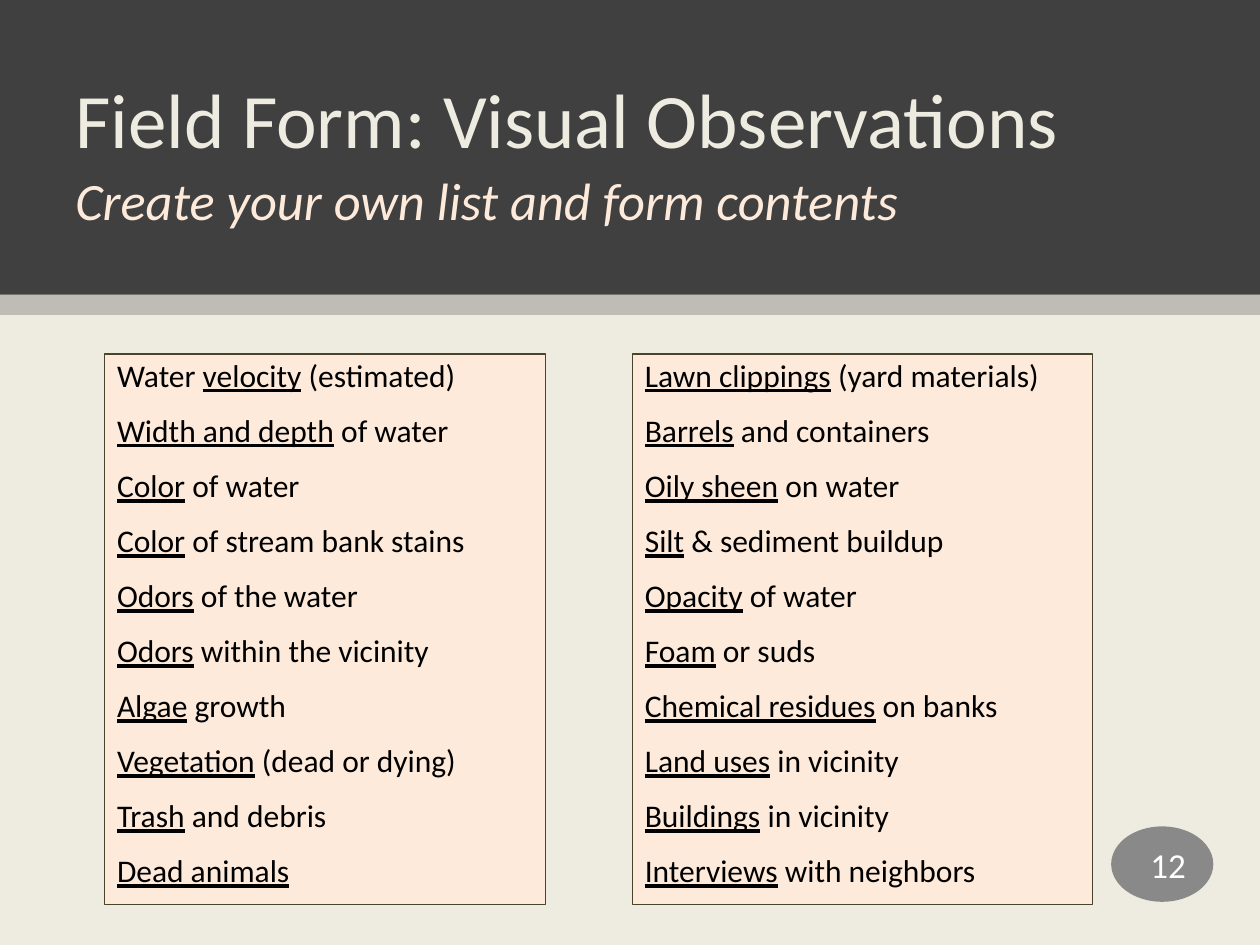
from lxml import etree
from pptx import Presentation
from pptx import util as u
from pptx.dml.color import RGBColor
from pptx.enum import shapes, text
from pptx.oxml import ns

COLORS = {
    "cream": "EEECE1",
    "charcoal": "404040",
    "peach": "FDEADA",
    "olive": "4A452A",
    "gray": "898989",
    "black": "000000",
    "white": "FFFFFF",
}
FONT = "Calibri"

WATER_SIGNS = [
    "Water _velocity_ (estimated)",
    "_Width and depth_ of water",
    "_Color_ of water",
    "_Color_ of stream bank stains",
    "_Odors_ of the water",
    "_Odors_ within the vicinity",
    "_Algae_ growth",
    "_Vegetation_ (dead or dying)",
    "_Trash_ and debris",
    "_Dead animals_",
]
SITE_SIGNS = [
    "_Lawn clippings_ (yard materials)",
    "_Barrels_ and containers",
    "_Oily sheen_ on water",
    "_Silt_ & sediment buildup",
    "_Opacity_ of water",
    "_Foam_ or suds",
    "_Chemical residues_ on banks",
    "_Land uses_ in vicinity",
    "_Buildings_ in vicinity",
    "_Interviews_ with neighbors",
]


def color(name):
    return RGBColor.from_string(COLORS[name])


def add_panel(page, box, fill, line=None, kind=shapes.MSO_SHAPE.RECTANGLE):
    panel = page.shapes.add_shape(kind, *map(u.Cm, box))
    panel.shadow.inherit = False
    panel.fill.solid()
    panel.fill.fore_color.rgb = color(fill)
    if line:
        panel.line.color.rgb = color(line)
        panel.line.width = u.Pt(0.75)
    else:
        panel.line.fill.background()
    return panel


def style_para(para, size, ink, align=text.PP_ALIGN.LEFT):
    para.alignment = align
    para.font.name = FONT
    para.font.size = u.Pt(size)
    para.font.color.rgb = color(ink)


def add_header(page, box):
    left, top, width, height = box
    strip_height = 0.41
    add_panel(page, box, "charcoal")
    title = page.shapes.add_textbox(
        u.Cm(left + 1.27), u.Cm(top + 1.19), u.Cm(width - 1.7), u.Cm(3.94))
    frame = title.text_frame
    frame.word_wrap = True
    frame.vertical_anchor = text.MSO_ANCHOR.MIDDLE
    heading, subtitle = frame.paragraphs[0], frame.add_paragraph()
    heading.text = "Field Form: Visual Observations"
    subtitle.text = "Create your own list and form contents"
    style_para(heading, 44, "cream")
    style_para(subtitle, 30, "peach")
    subtitle.font.italic = True
    for para in frame.paragraphs:
        para.line_spacing = 0.9
        para.space_after = u.Pt(6)
    strip = add_panel(page, (left, top + height, width, strip_height), "black")
    tone = strip.fill._xPr.find(".//" + ns.qn("a:srgbClr"))
    etree.SubElement(tone, ns.qn("a:alpha"), val="20000")


def add_checklist(page, box, items):
    frame = add_panel(page, box, "peach", "olive").text_frame
    frame.word_wrap = True
    frame.vertical_anchor = text.MSO_ANCHOR.TOP
    for index, item in enumerate(items):
        para = frame.add_paragraph() if index else frame.paragraphs[0]
        style_para(para, 18, "black")
        para.line_spacing = 0.9
        para.space_before = u.Pt(12)
        for position, part in enumerate(item.split("_")):
            if part:
                span = para.add_run()
                span.text = part
                span.font.underline = position % 2 == 1


def add_page_number(page, box, number):
    badge = add_panel(page, box, "gray", kind=shapes.MSO_SHAPE.OVAL)
    frame = badge.text_frame
    frame.vertical_anchor = text.MSO_ANCHOR.MIDDLE
    para = frame.paragraphs[0]
    para.text = str(number)
    para.space_after = u.Pt(6)
    style_para(para, 20, "white", text.PP_ALIGN.RIGHT)


def main():
    deck = Presentation()
    deck.slide_width, deck.slide_height = u.Cm(25.4), u.Cm(19.05)
    page = deck.slides.add_slide(deck.slide_layouts[6])
    add_panel(page, (0, 0, 25.4, 19.05), "cream")
    add_header(page, (0, 0, 25.4, 5.94))
    add_checklist(page, (2.11, 7.14, 8.89, 11.1), WATER_SIGNS)
    add_checklist(page, (12.75, 7.14, 9.27, 11.1), SITE_SIGNS)
    add_page_number(page, (22.4, 16.66, 2.06, 1.52), 12)
    deck.save("out.pptx")


if __name__ == "__main__":
    main()
